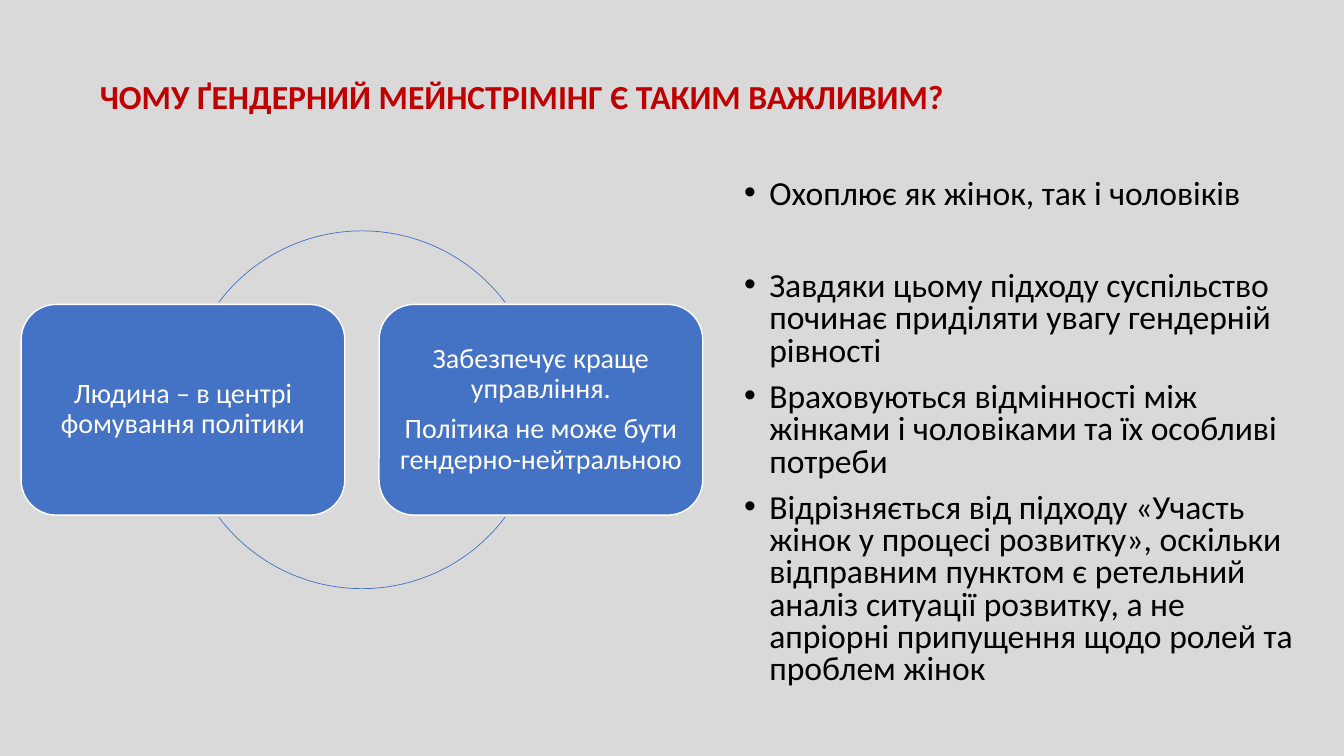
import math

import pptx
import pptx.dml.color
import pptx.enum.shapes
import pptx.enum.text
import pptx.oxml.ns
import pptx.util
from lxml import etree

Inches, Pt = pptx.util.Inches, pptx.util.Pt
ALIGN = pptx.enum.text.PP_ALIGN
ANCHOR = pptx.enum.text.MSO_ANCHOR
SHAPE = pptx.enum.shapes.MSO_SHAPE

COLORS = {"background": "D9D9D9", "heading": "C00000", "blue": "4472C4",
          "white": "FFFFFF", "black": "000000"}

HEADING = "ЧОМУ ҐЕНДЕРНИЙ МЕЙНСТРІМІНГ Є ТАКИМ ВАЖЛИВИМ?"
CARDS = [
    ["Людина – в центрі фомування політики"],
    ["Забезпечує краще управління.",
     "Політика не може бути гендерно-нейтральною"],
]
# Each reason with the space before it, in points
REASONS = [
    ("Охоплює як жінок, так і чоловіків", 0),
    ("Завдяки цьому підходу суспільство починає приділяти увагу гендерній "
     "рівності", 43),
    ("Враховуються відмінності між жінками і чоловіками та їх особливі потреби",
     10),
    ("Відрізняється від підходу «Участь жінок у процесі розвитку», оскільки "
     "відправним пунктом є ретельний аналіз ситуації розвитку, а не апріорні "
     "припущення щодо ролей та проблем жінок", 10),
]


def rgb(name):
    return pptx.dml.color.RGBColor.from_string(COLORS[name])


def apply(target, formats):
    for name, value in formats.items():
        setattr(target, name, value)


def place(part, box):
    apply(part, dict(zip(("left", "top", "width", "height"), map(Inches, box))))


def write(paragraph, text, size, color, bold=False, **formats):
    paragraph.text = text
    apply(paragraph, formats)
    apply(paragraph.font, {"name": "Calibri", "size": Pt(size), "bold": bold})
    paragraph.font.color.rgb = rgb(color)


def next_paragraph(frame, index):
    return frame.add_paragraph() if index else frame.paragraphs[0]


def add_bullet(paragraph):
    properties = paragraph._p.get_or_add_pPr()
    properties.set("marL", str(Inches(0.25)))
    properties.set("indent", str(-Inches(0.25)))
    for tag, attribute, value in (("a:buFont", "typeface", "Arial"),
                                  ("a:buChar", "char", "•")):
        etree.SubElement(properties, pptx.oxml.ns.qn(tag)).set(attribute, value)


def build_heading(heading, box):
    place(heading, box)
    frame = heading.text_frame
    apply(frame, {"word_wrap": True, "vertical_anchor": ANCHOR.TOP,
                  "auto_size": pptx.enum.text.MSO_AUTO_SIZE.NONE,
                  "margin_top": Inches(0.07)})
    write(frame.paragraphs[0], HEADING, 24, "heading", True,
          alignment=ALIGN.LEFT, line_spacing=0.9)


def build_reasons(reasons, box):
    place(reasons, box)
    frame = reasons.text_frame
    apply(frame, {"word_wrap": True, "vertical_anchor": ANCHOR.TOP,
                  "auto_size": pptx.enum.text.MSO_AUTO_SIZE.NONE})
    for index, (reason, gap) in enumerate(REASONS):
        paragraph = next_paragraph(frame, index)
        add_bullet(paragraph)
        write(paragraph, reason, 24, "black", alignment=ALIGN.LEFT,
              line_spacing=0.8, space_before=Pt(gap))


def add_card(slide, lines, box):
    card = slide.shapes.add_shape(SHAPE.ROUNDED_RECTANGLE, *map(Inches, box))
    card.shadow.inherit = False
    card.fill.solid()
    card.fill.fore_color.rgb = rgb("blue")
    card.line.color.rgb = rgb("white")
    card.line.width = Pt(1)
    frame = card.text_frame
    apply(frame, {"word_wrap": True, "vertical_anchor": ANCHOR.MIDDLE})
    apply(frame, {f"margin_{side}": Inches(0.08)
                  for side in ("left", "top", "right", "bottom")})
    for index, line in enumerate(lines):
        write(next_paragraph(frame, index), line, 20, "white",
              alignment=ALIGN.CENTER, line_spacing=0.9, space_after=Pt(7))


def add_arc(slide, box, start, end):
    arc = slide.shapes.add_shape(SHAPE.ARC, *map(Inches, box))
    arc.shadow.inherit = False
    arc.fill.background()
    arc.line.color.rgb = rgb("blue")
    arc.line.width = Pt(0.5)
    # One degree is 60000 units; adjustments count in 100000
    for index, angle in enumerate((start, end)):
        arc.adjustments[index] = angle * 0.6


def build_cycle(slide, box):
    left, top, width, height = box
    card_width, card_height = 3.21, 2.09
    card_top = top + (height - card_height) / 2
    # Ring through both cards, broken just above and below them
    ring = height
    ring_box = (left + (width - ring) / 2, top, ring, ring)
    edge = math.degrees(math.asin((card_height / 2 + 0.02) / (ring / 2)))
    for start, end in ((180 + edge, 360 - edge), (edge, 180 - edge)):
        add_arc(slide, ring_box, start, end)
    for index, lines in enumerate(CARDS):
        card_left = left + index * (width - card_width)
        add_card(slide, lines, (card_left, card_top, card_width, card_height))


def main():
    deck = pptx.Presentation()
    apply(deck, {"slide_width": Inches(13.33), "slide_height": Inches(7.5)})
    slide = deck.slides.add_slide(deck.slide_layouts[1])
    slide.background.fill.solid()
    slide.background.fill.fore_color.rgb = rgb("background")

    build_heading(slide.shapes.title, (0.89, 0.73, 11.38, 1.24))
    build_cycle(slide, (0.21, 2.29, 6.76, 3.55))
    build_reasons(slide.placeholders[1], (7.28, 1.73, 5.67, 5.63))
    deck.save("out.pptx")


if __name__ == "__main__":
    main()
